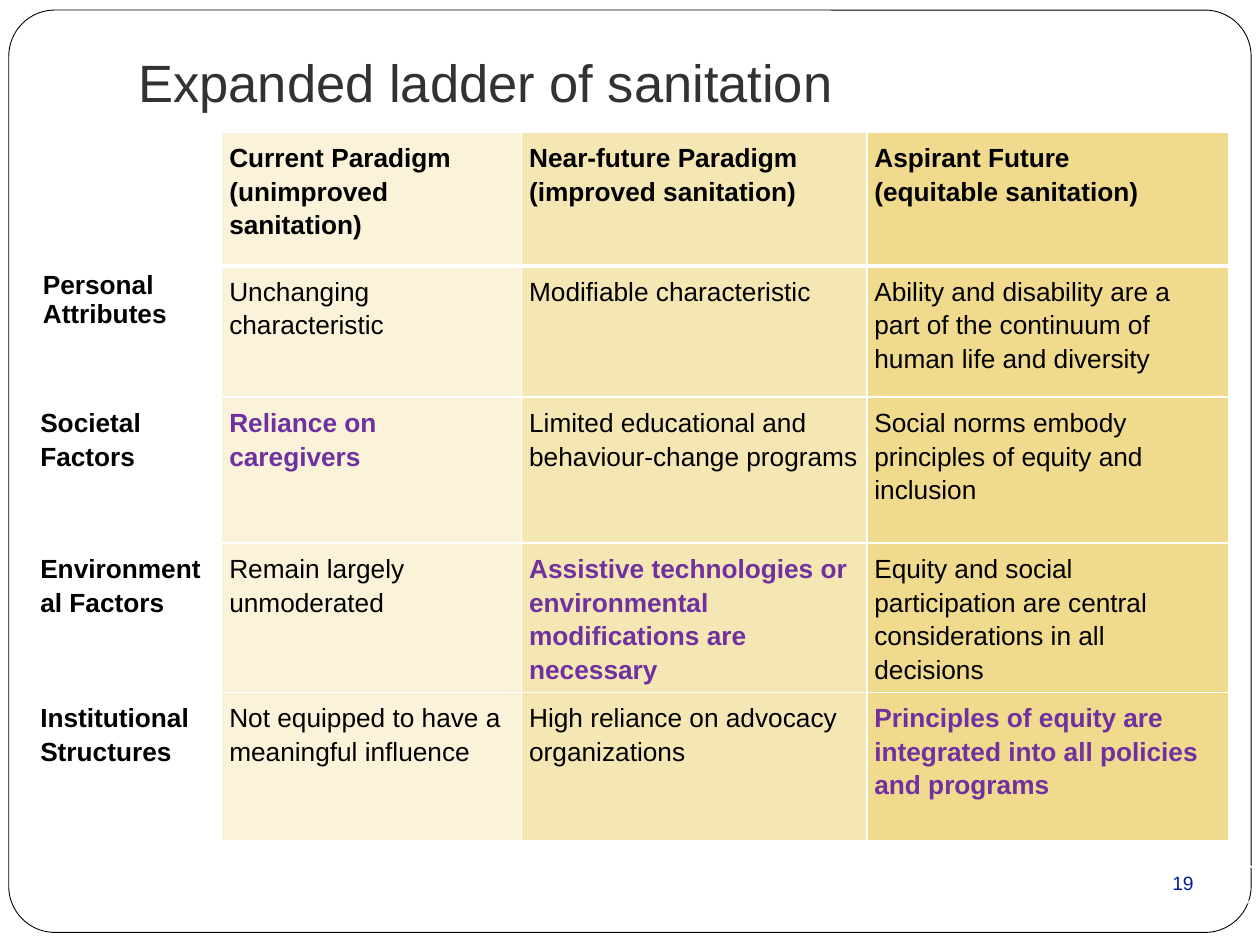
"""Build the slide that sets out the expanded ladder of sanitation."""
from dataclasses import dataclass

from lxml import etree
from pptx import Presentation
from pptx import util as u
from pptx.dml.color import RGBColor
from pptx.enum import shapes, text
from pptx.oxml import ns

FONT = "Arial"
WHITE = RGBColor(0xFF, 0xFF, 0xFF)
BLACK = RGBColor(0x00, 0x00, 0x00)
PURPLE = RGBColor(0x70, 0x30, 0xA0)
TITLE_GREY = RGBColor(0x32, 0x32, 0x32)
NUMBER_BLUE = RGBColor(0x04, 0x1A, 0x9B)
COLUMN_FILLS = (
    WHITE,
    RGBColor(0xFA, 0xF3, 0xD9),
    RGBColor(0xF5, 0xE7, 0xB4),
    RGBColor(0xEF, 0xDA, 0x8E),
)
COLUMN_WIDTHS = (1.5, 2.38, 2.74, 2.87)


@dataclass(frozen=True)
class Rung:
    """A table row: its height, its entries and the column picked out in purple."""

    height: float
    entries: tuple[str, ...]
    highlight: int | None = None


RUNGS = (
    Rung(1.06, (
        "",
        "Current Paradigm\n(unimproved sanitation)",
        "Near-future Paradigm\n(improved sanitation)",
        "Aspirant Future\n(equitable sanitation)",
    )),
    Rung(1.04, (
        "Personal Attributes",
        "Unchanging characteristic",
        "Modifiable characteristic",
        "Ability and disability are a part of the continuum of human life and diversity",
    )),
    Rung(1.16, (
        "Societal Factors",
        "Reliance on caregivers",
        "Limited educational and behaviour-change programs",
        "Social norms embody principles of equity and inclusion",
    ), 1),
    Rung(1.16, (
        "Environmental Factors",
        "Remain largely unmoderated",
        "Assistive technologies or environmental modifications are necessary",
        "Equity and social participation are central considerations in all decisions",
    ), 2),
    Rung(1.18, (
        "Institutional Structures",
        "Not equipped to have a meaningful influence",
        "High reliance on advocacy organizations",
        "Principles of equity are integrated into all policies and programs",
    ), 3),
)


def add_run(paragraph, words: str, size: float, color: RGBColor, bold: bool = False) -> None:
    """Append one styled run to a paragraph."""
    run = paragraph.add_run()
    run.text = words
    run.font.name = FONT
    run.font.size = u.Pt(size)
    run.font.bold = bold
    run.font.color.rgb = color


def set_insets(holder, side: float, top: float, bottom: float) -> None:
    """Set the inner margins of a cell or text frame in inches."""
    holder.margin_left = holder.margin_right = u.Inches(side)
    holder.margin_top, holder.margin_bottom = u.Inches(top), u.Inches(bottom)


def add_borders(cell, bottom: float) -> None:
    """Draw white borders around a cell, with the given bottom width in points."""
    properties = cell._tc.get_or_add_tcPr()
    widths = {"lnL": 1, "lnR": 1, "lnT": 1, "lnB": bottom}
    for position, (side, width) in enumerate(widths.items()):
        line = etree.Element(ns.qn(f"a:{side}"), w=str(u.Pt(width)))
        fill = etree.SubElement(line, ns.qn("a:solidFill"))
        etree.SubElement(fill, ns.qn("a:srgbClr"), val=str(WHITE))
        properties.insert(position, line)


def fill_cell(cell, rung: Rung, row: int, column: int) -> None:
    """Write and style one table cell."""
    cell.fill.solid()
    cell.fill.fore_color.rgb = COLUMN_FILLS[column]
    add_borders(cell, 3 if row == 0 else 1)
    compact = (row, column) == (1, 0)
    if compact:
        set_insets(cell, 0.08, 0.04, 0.04)
    else:
        set_insets(cell, 0.06, 0.06, 0.06)
    highlighted = column == rung.highlight
    for index, words in enumerate(rung.entries[column].splitlines()):
        frame = cell.text_frame
        paragraph = frame.add_paragraph() if index else frame.paragraphs[0]
        if not compact:
            paragraph.line_spacing = 1.15
        add_run(paragraph, words, 15, PURPLE if highlighted else BLACK,
                row == 0 or column == 0 or highlighted)


def add_ladder(slide) -> None:
    """Add the table of paradigms and factors."""
    ladder = slide.shapes.add_table(
        len(RUNGS), len(COLUMN_WIDTHS), u.Inches(0.26), u.Inches(1.05),
        u.Inches(sum(COLUMN_WIDTHS)), u.Inches(sum(rung.height for rung in RUNGS)),
    ).table
    for column, width in zip(ladder.columns, COLUMN_WIDTHS):
        column.width = u.Inches(width)
    for row, rung in enumerate(RUNGS):
        ladder.rows[row].height = u.Inches(rung.height)
        for column in range(len(COLUMN_WIDTHS)):
            fill_cell(ladder.cell(row, column), rung, row, column)


def add_frame(slide) -> None:
    """Add the rounded outline around the slide."""
    frame = slide.shapes.add_shape(
        shapes.MSO_SHAPE.ROUNDED_RECTANGLE,
        u.Inches(0.07), u.Inches(0.08), u.Inches(9.86), u.Inches(7.32),
    )
    frame.adjustments[0] = 0.05
    frame.shadow.inherit = False
    frame.fill.solid()
    frame.fill.fore_color.rgb = WHITE
    frame.line.color.rgb = BLACK
    frame.line.width = u.Pt(0.5)


def add_page_number(slide) -> None:
    """Add the page number in its white ring."""
    ring = slide.shapes.add_shape(
        shapes.MSO_SHAPE.OVAL, u.Inches(9.07), u.Inches(6.76), u.Inches(0.93), u.Inches(0.5)
    )
    ring.shadow.inherit = False
    ring.fill.background()
    ring.line.color.rgb = WHITE
    ring.line.width = u.Pt(0.75)
    ring.text_frame.vertical_anchor = text.MSO_ANCHOR.MIDDLE
    paragraph = ring.text_frame.paragraphs[0]
    paragraph.alignment = text.PP_ALIGN.LEFT
    add_run(paragraph, "19", 11, NUMBER_BLUE)


def add_title(slide) -> None:
    """Add the title with its first line indented by an inch."""
    frame = slide.shapes.add_textbox(0, 0, u.Inches(10), u.Inches(1)).text_frame
    frame.word_wrap = True
    frame.vertical_anchor = text.MSO_ANCHOR.BOTTOM
    set_insets(frame, 0.1, 0.05, 0.1)
    paragraph = frame.paragraphs[0]
    paragraph._p.get_or_add_pPr().set("indent", str(u.Inches(1)))
    add_run(paragraph, "Expanded ladder of sanitation", 30, TITLE_GREY)


def main() -> None:
    """Assemble and save the slide."""
    deck = Presentation()
    deck.slide_width, deck.slide_height = u.Inches(10), u.Inches(7.5)
    slide = deck.slides.add_slide(deck.slide_layouts[6])
    add_frame(slide)
    add_ladder(slide)
    add_page_number(slide)
    add_title(slide)
    deck.save("out.pptx")


if __name__ == "__main__":
    main()
